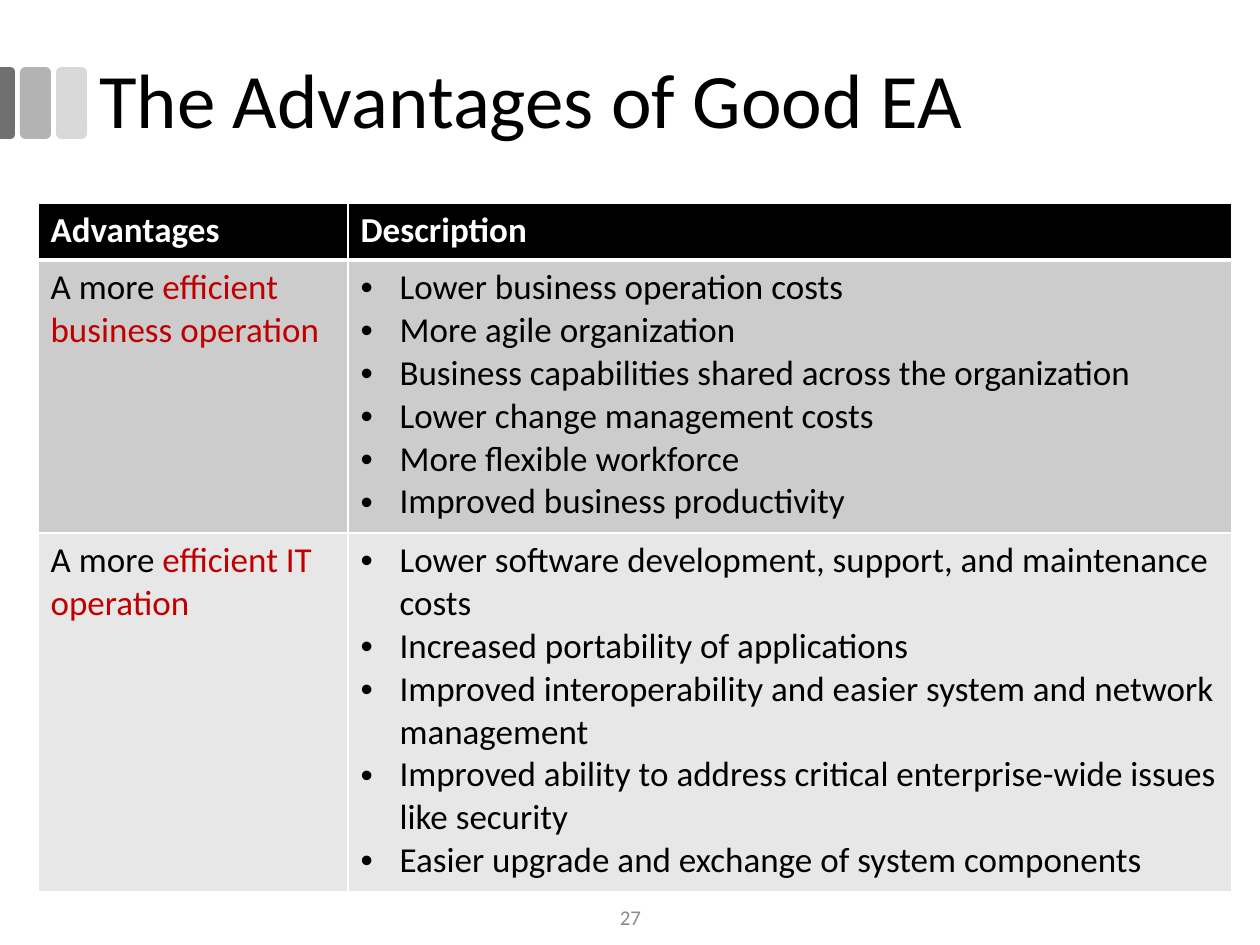
from dataclasses import dataclass

from lxml import etree
from pptx import Presentation
from pptx import util as u
from pptx.dml.color import RGBColor
from pptx.enum import shapes, text
from pptx.oxml import ns


@dataclass(frozen=True)
class Theme:
    font: str = "Calibri"
    ink: str = "000000"
    paper: str = "FFFFFF"
    accent: str = "C00000"
    muted: str = "8C8C8C"
    bars: tuple = ("D9D9D9", "B3B3B3", "707070")
    rows: tuple = ("000000", "CCCCCC", "E7E7E7")
    title_size: int = 44
    body_size: int = 20
    number_size: int = 12


THEME = Theme()
SCALE = 914400 / 126
SLIDE_SIZE = (1260, 945)
COLUMN_WIDTHS = (310, 884)
ROW_HEIGHTS = (57, 273, 359)
BULLET_INDENT = 39
HEADINGS = ("Advantages", "Description")
ADVANTAGES = (
    ("efficient business operation", (
        "Lower business operation costs",
        "More agile organization",
        "Business capabilities shared across the organization",
        "Lower change management costs",
        "More flexible workforce",
        "Improved business productivity",
    )),
    ("efficient IT operation", (
        "Lower software development, support, and maintenance costs",
        "Increased portability of applications",
        "Improved interoperability and easier system and network management",
        "Improved ability to address critical enterprise-wide issues like security",
        "Easier upgrade and exchange of system components",
    )),
)


def px(value):
    return u.Emu(round(value * SCALE))


def set_all(target, values):
    for name, value in values.items():
        setattr(target, name, value)


def paint(target, color):
    target.fill.solid()
    target.fill.fore_color.rgb = RGBColor.from_string(color)


def add_run(paragraph, content, size, color, bold=False):
    run = paragraph.add_run()
    run.text = content
    set_all(run.font, {"name": THEME.font, "size": u.Pt(size), "bold": bold})
    run.font.color.rgb = RGBColor.from_string(color)


def add_bar(slide, kind, box, color, rotation=0):
    shape = slide.shapes.add_shape(kind, *map(px, box))
    shape.shadow.inherit = False
    shape.rotation = rotation
    paint(shape, color)
    shape.line.fill.background()
    return shape


def add_bars(slide):
    rounded = shapes.MSO_SHAPE.ROUNDED_RECTANGLE
    for left, color in zip((56, 20), THEME.bars):
        add_bar(slide, rounded, (left, 67, 31, 72), color)
    edge_bar = add_bar(slide, shapes.MSO_SHAPE.ROUND_2_SAME_RECTANGLE,
                       (-29, 95, 72, 16), THEME.bars[2], 90)
    edge_bar.adjustments[0] = 0.29


def add_label(slide, box, content, size, color, **paragraph_format):
    frame = slide.shapes.add_textbox(*map(px, box)).text_frame
    set_all(frame, {"word_wrap": True, "vertical_anchor": text.MSO_ANCHOR.MIDDLE})
    paragraph = frame.paragraphs[0]
    set_all(paragraph, paragraph_format)
    add_run(paragraph, content, size, color)


def set_borders(cell, top, bottom):
    properties = cell._tc.get_or_add_tcPr()
    for side, points in {"L": 1, "R": 1, "T": top, "B": bottom}.items():
        line = etree.SubElement(properties, ns.qn(f"a:ln{side}"), w=str(u.Pt(points)))
        fill = etree.SubElement(line, ns.qn("a:solidFill"))
        etree.SubElement(fill, ns.qn("a:srgbClr"), val=THEME.paper)


def add_bullet(paragraph):
    properties = paragraph._p.get_or_add_pPr()
    indent = px(BULLET_INDENT)
    properties.set("marL", str(indent))
    properties.set("indent", str(-indent))
    etree.SubElement(properties, ns.qn("a:buFont"), typeface="Arial")
    etree.SubElement(properties, ns.qn("a:buChar"), char="•")


def fill_bullets(frame, items):
    for index, item in enumerate(items):
        paragraph = frame.add_paragraph() if index else frame.paragraphs[0]
        add_bullet(paragraph)
        add_run(paragraph, item, THEME.body_size, THEME.ink)


def add_advantages_table(slide):
    box = (38, 203, sum(COLUMN_WIDTHS), sum(ROW_HEIGHTS))
    table = slide.shapes.add_table(len(ROW_HEIGHTS), len(COLUMN_WIDTHS), *map(px, box)).table
    set_all(table, {"first_row": False, "horz_banding": False})
    for column, width in zip(table.columns, COLUMN_WIDTHS):
        column.width = px(width)
    for index, (row, height) in enumerate(zip(table.rows, ROW_HEIGHTS)):
        row.height = px(height)
        for cell in row.cells:
            set_borders(cell, 3 if index == 1 else 1, 3 if index == 0 else 1)
            paint(cell, THEME.rows[index])
    for column, heading in enumerate(HEADINGS):
        paragraph = table.cell(0, column).text_frame.paragraphs[0]
        add_run(paragraph, heading, THEME.body_size, THEME.paper, bold=True)
    for row, (advantage, descriptions) in enumerate(ADVANTAGES, start=1):
        paragraph = table.cell(row, 0).text_frame.paragraphs[0]
        add_run(paragraph, "A more ", THEME.body_size, THEME.ink)
        add_run(paragraph, advantage, THEME.body_size, THEME.accent)
        fill_bullets(table.cell(row, 1).text_frame, descriptions)


def main():
    presentation = Presentation()
    width, height = map(px, SLIDE_SIZE)
    set_all(presentation, {"slide_width": width, "slide_height": height})
    slide = presentation.slides.add_slide(presentation.slide_layouts[6])
    paint(slide.background, THEME.paper)
    add_bars(slide)
    add_label(slide, (87, 21, 1086, 165), "The Advantages of Good EA",
              THEME.title_size, THEME.ink, line_spacing=0.9)
    add_advantages_table(slide)
    add_label(slide, (489, 892, 283, 50), "27", THEME.number_size, THEME.muted,
              alignment=text.PP_ALIGN.CENTER)
    presentation.save("out.pptx")


if __name__ == "__main__":
    main()
